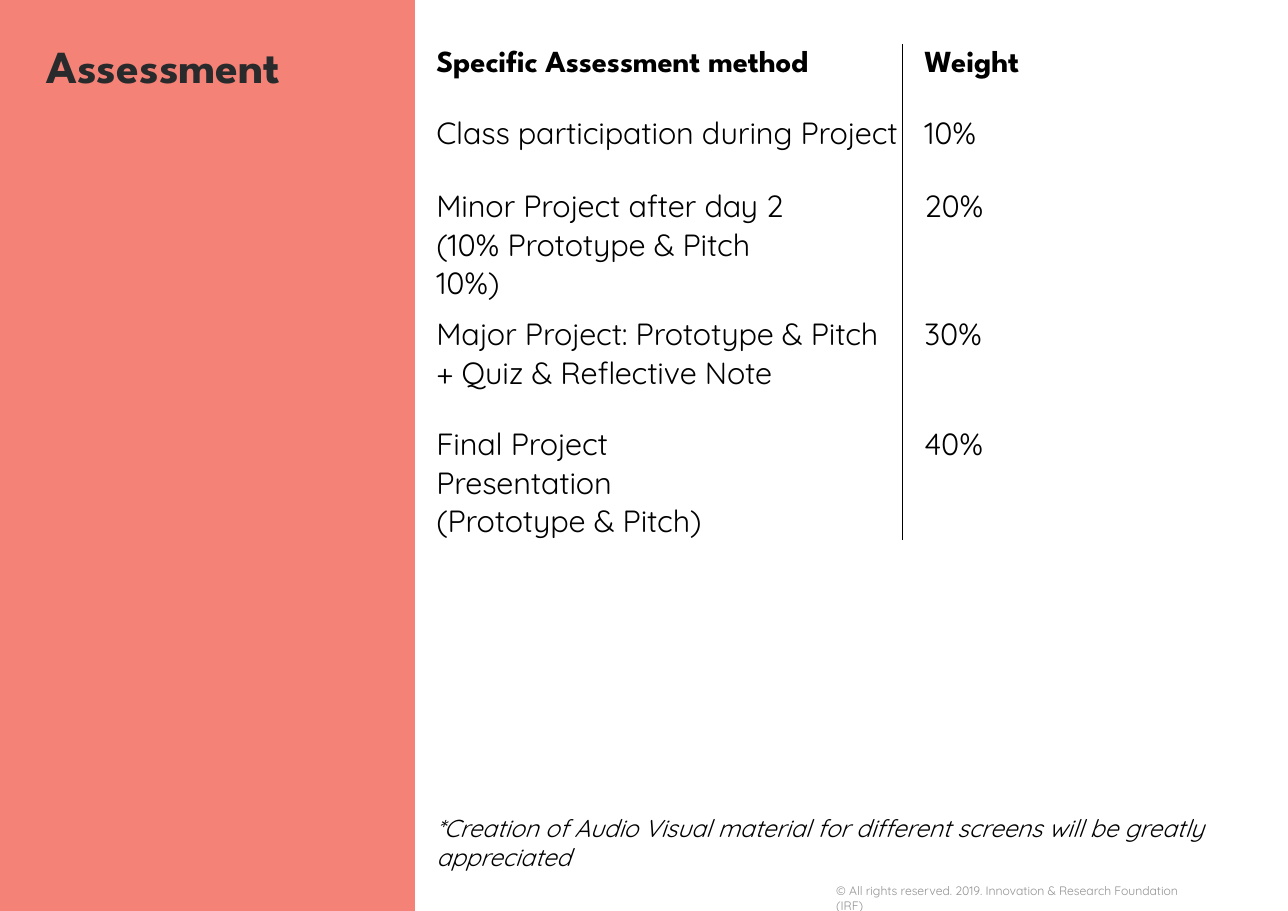
from lxml import etree
from pptx import Presentation
from pptx.dml import color
from pptx.enum import text
from pptx.oxml import ns
from pptx.util import Inches, Pt

HEAD = "League Spartan"
BODY = "Quicksand"
PLAIN = "{2D5ABB26-0587-4C30-8999-92F81FD0307C}"
ROWS = [
    ("Minor Project after day 2 (10% Prototype & Pitch 10%)", "20%", 1.16, 0.9),
    ("Major Project: Prototype & Pitch\n+ Quiz & Reflective Note", "30%", 1, 0),
    ("Final Project Presentation (Prototype & Pitch)", "40%", 1.16, 1.4),
]


def rgb(code):
    return color.RGBColor.from_string(code)


def write(para, words, size=20, font=BODY, ink="000000", bold=False,
          italic=False, before=0, line=None, track=-10):
    run = para.add_run()
    run.text = words
    run.font.size = Pt(size)
    run.font.name = font
    run.font.bold = bold
    run.font.italic = italic
    run.font.color.rgb = rgb(ink)
    run.font._element.set("spc", str(track))
    if before:
        para.space_before = Pt(before)
    if line:
        para.line_spacing = Pt(line)


def add_text(slide, words, left, top, width, height, **style):
    frame = slide.shapes.add_textbox(
        Inches(left), Inches(top), Inches(width), Inches(height)).text_frame
    frame.word_wrap = True
    frame.margin_left = frame.margin_right = frame.margin_bottom = 0
    frame.margin_top = Inches(0.01)
    frame.vertical_anchor = text.MSO_ANCHOR.TOP
    write(frame.paragraphs[0], words, **style)


def add_panel(slide):
    edge = slide.shapes.build_freeform(0, Inches(8.27))
    edge.add_line_segments([
        (Inches(3.77), Inches(8.27)), (Inches(3.77), 0), (0, 0)], close=True)
    panel = edge.convert_to_shape()
    panel.shadow.inherit = False
    panel.fill.solid()
    panel.fill.fore_color.rgb = rgb("F48276")
    panel.line.fill.background()


def set_cell(cell, side, left, top=0, right=0):
    cell.margin_left = Inches(left)
    cell.margin_top = Inches(top)
    cell.margin_right = Inches(right)
    cell.margin_bottom = 0
    cell.fill.background()
    props = cell._tc.get_or_add_tcPr()
    line = etree.Element(ns.qn("a:" + side), w=str(Pt(1)))
    fill = etree.SubElement(line, ns.qn("a:solidFill"))
    etree.SubElement(fill, ns.qn("a:srgbClr"), val="000000")
    props.insert(0, line)


def add_grid(slide):
    grid = slide.shapes.add_table(
        4, 2, Inches(3.93), Inches(0.4), Inches(5.42), Inches(4.5)).table
    grid.first_row = grid.horz_banding = False
    grid._tbl.tblPr.find(ns.qn("a:tableStyleId")).text = PLAIN
    sides = [("lnR", 0.03), ("lnL", 0.2)]
    for col, width in zip(grid.columns, (4.26, 1.16)):
        col.width = Inches(width)

    grid.rows[0].height = Inches(1.18)
    heads = [("Specific Assessment method", "Class participation during Project"),
             ("Weight", "10%")]
    for col, (head, first) in enumerate(heads):
        cell = grid.cell(0, col)
        set_cell(cell, *sides[col])
        frame = cell.text_frame
        write(frame.paragraphs[0], head, font=HEAD, bold=True, line=23.2)
        write(frame.add_paragraph(), first, before=22.7)

    for row, (task, weight, height, right) in enumerate(ROWS, 1):
        grid.rows[row].height = Inches(height)
        for col, (words, gap) in enumerate([(task, right), (weight, 0)]):
            cell = grid.cell(row, col)
            set_cell(cell, *sides[col], top=0.12, right=gap)
            frame = cell.text_frame
            for i, part in enumerate(words.split("\n")):
                para = frame.add_paragraph() if i else frame.paragraphs[0]
                write(para, part)


def main():
    deck = Presentation()
    deck.slide_width = Inches(11.69)
    deck.slide_height = Inches(8.27)
    slide = deck.slides.add_slide(deck.slide_layouts[6])
    add_panel(slide)
    add_text(slide, "Assessment", 0.42, 0.33, 2.36, 0.53,
             size=30, font=HEAD, ink="292A2B", bold=True, track=0)
    add_text(slide, "© All rights reserved. 2019. Innovation & Research Foundation (IRF)",
             7.59, 8.01, 3.16, 0.16, size=8, ink="929292", track=-5)
    add_grid(slide)
    add_text(slide, "*Creation of Audio Visual material for different screens "
             "will be greatly appreciated",
             3.96, 7.37, 7.51, 0.29, size=16, italic=True, track=-5)
    deck.save("out.pptx")


if __name__ == "__main__":
    main()
